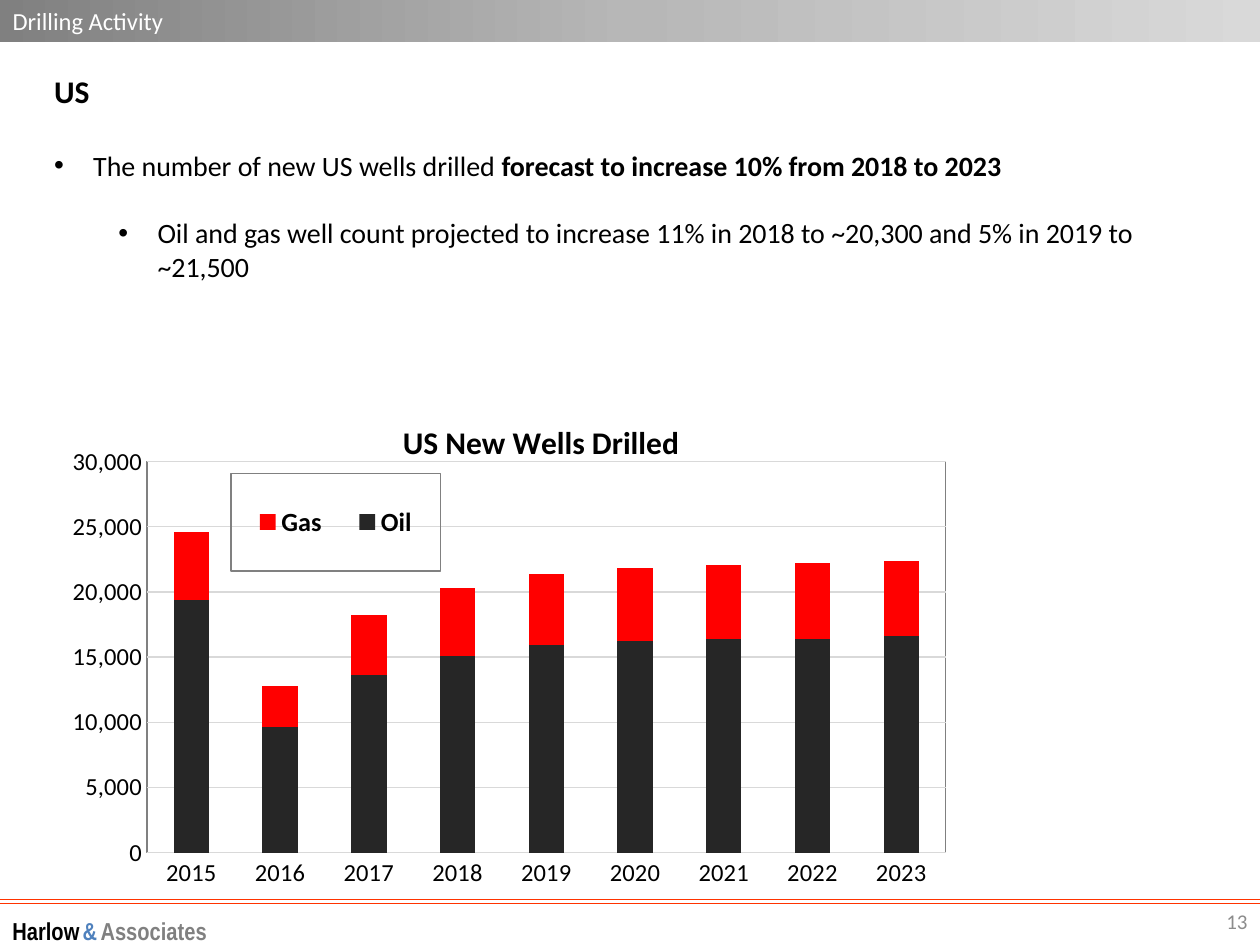
from copy import deepcopy

from lxml import etree
from pptx import Presentation
from pptx.chart.data import CategoryChartData
from pptx.dml.color import RGBColor
from pptx.enum.chart import XL_CHART_TYPE, XL_LEGEND_POSITION, XL_TICK_MARK
from pptx.enum.shapes import MSO_CONNECTOR
from pptx.enum.text import MSO_ANCHOR, MSO_AUTO_SIZE, PP_ALIGN
from pptx.oxml.ns import qn
from pptx.util import Inches, Pt

STACKED = XL_CHART_TYPE.COLUMN_STACKED
LEGEND_RIGHT = XL_LEGEND_POSITION.RIGHT
NO_TICK = XL_TICK_MARK.NONE
STRAIGHT = MSO_CONNECTOR.STRAIGHT
TOP, MIDDLE = MSO_ANCHOR.TOP, MSO_ANCHOR.MIDDLE
NO_AUTOFIT = MSO_AUTO_SIZE.NONE
LEFT, RIGHT = PP_ALIGN.LEFT, PP_ALIGN.RIGHT

THEME = {
    "font": "Calibri", "footer_font": "Arial Narrow",
    "black": "000000", "white": "FFFFFF", "gray": "808080",
    "number": "8C8C8C", "grid": "D9D9D9", "rule": "FF3300", "accent": "4F81BD",
    "bar": [(0, "808080"), (0.5, "B7B7B7"), (1, "D9D9D9")],
    "heading": 18, "body": 16, "header": 14, "axis": 14, "legend": 15,
    "footer": 14, "footer_gap": 8, "page": 12,
}

# Content: each body line is (runs as (text, bold), size, space before, indent)
HEADER = "Drilling Activity"
BODY = [
    ([("US", True)], THEME["heading"], 0, None),
    ([("The number of new US wells drilled ", False),
      ("forecast to increase 10% from 2018 to 2023", True)], THEME["body"], 22, 0.31),
    ([("Oil and gas well count projected to increase 11% in 2018 to ~20,300 "
       "and 5% in 2019 to ~21,500", False)], THEME["body"], 19.5, 0.82),
]
HANGING = 0.31
CHART_TITLE = "US New Wells Drilled"
YEARS = [str(year) for year in range(2015, 2024)]
WELLS = [
    ("Oil", "262626", [19400, 9600, 13600, 15100, 15900, 16200, 16400, 16400, 16600]),
    ("Gas", "FF0000", [5200, 3200, 4600, 5200, 5500, 5600, 5700, 5800, 5800]),
]
FOOTER = [("Harlow", "black"), ("&", "accent"), ("Associates", "gray")]
PAGE = "13"
RULES = [7.14, 7.17]


def rgb(value):
    return RGBColor.from_string(value)


def style(font, size, color=THEME["black"], bold=False, name=THEME["font"]):
    font.size, font.bold, font.name = Pt(size), bold, name
    font.color.rgb = rgb(color)


def add_run(p, text, **fmt):
    r = p.add_run()
    r.text = text
    style(r.font, **fmt)


def place(sp, left, top, width, height, anchor=MIDDLE):
    sp.left, sp.top = Inches(left), Inches(top)
    sp.width, sp.height = Inches(width), Inches(height)
    tf = sp.text_frame
    tf.word_wrap, tf.auto_size, tf.vertical_anchor = True, NO_AUTOFIT, anchor
    return tf


def set_bullet(p, indent):
    pPr = p._p.get_or_add_pPr()
    hanging = 0 if indent is None else HANGING
    pPr.set("marL", str(Inches(indent or 0)))
    pPr.set("indent", str(-Inches(hanging)))
    if indent is None:
        etree.SubElement(pPr, qn("a:buNone"))
    else:
        etree.SubElement(pPr, qn("a:buFont"), typeface="Arial")
        etree.SubElement(pPr, qn("a:buChar"), char="•")


def set_layout(parent, index, inner=False, **box):
    """Place a chart part by fractions of the chart area."""
    for old in parent.findall(qn("c:layout")):
        parent.remove(old)
    layout = etree.Element(qn("c:layout"))
    parent.insert(index, layout)
    manual = etree.SubElement(layout, qn("c:manualLayout"))
    values = [("layoutTarget", "inner")] if inner else []
    values += [("xMode", "edge"), ("yMode", "edge")]
    values += [(key, str(value)) for key, value in box.items()]
    for key, value in values:
        etree.SubElement(manual, qn(f"c:{key}"), val=value)


def outline(color, width=0.75):
    spPr = etree.Element(qn("c:spPr"))
    etree.SubElement(spPr, qn("a:noFill"))
    ln = etree.SubElement(spPr, qn("a:ln"), w=str(Pt(width)))
    fill = etree.SubElement(ln, qn("a:solidFill"))
    etree.SubElement(fill, qn("a:srgbClr"), val=color)
    return spPr


def add_header(sp):
    tf = place(sp, 0, 0, 10, 0.33)
    sp.fill.gradient()
    sp.fill.gradient_angle = 0
    stops = sp._element.spPr.find(".//" + qn("a:gsLst"))
    stops.insert(1, deepcopy(stops[0]))
    for stop, (position, color) in zip(sp.fill.gradient_stops, THEME["bar"]):
        stop.position, stop.color.rgb = position, rgb(color)
    p = tf.paragraphs[0]
    p.alignment = LEFT
    add_run(p, HEADER, size=THEME["header"], color=THEME["white"])


def add_body(sp):
    tf = place(sp, 0.33, 0.52, 8.95, 1.78, TOP)
    for i, (runs, size, before, indent) in enumerate(BODY):
        p = tf.add_paragraph() if i else tf.paragraphs[0]
        p.space_before = Pt(before)
        set_bullet(p, indent)
        for text, bold in runs:
            add_run(p, text, size=size, bold=bold)


def add_wells_chart(s):
    data = CategoryChartData(number_format="#,##0")
    data.categories = YEARS
    for name, _, values in WELLS:
        data.add_series(name, values)
    chart = s.shapes.add_chart(STACKED, Inches(0.5), Inches(3.17),
                               Inches(7.17), Inches(3.98), data).chart
    style(chart.font, 10, bold=True)

    # Title
    tf = chart.chart_title.text_frame
    add_run(tf.paragraphs[0], CHART_TITLE, size=THEME["heading"], bold=True)
    set_layout(chart.chart_title._element, 1, x=0.37, y=0.03)

    # Columns
    plot = chart.plots[0]
    plot.gap_width, plot.overlap, plot.vary_by_categories = 151, 100, False
    for series, (_, color, _) in zip(plot.series, WELLS):
        series.format.fill.solid()
        series.format.fill.fore_color.rgb = rgb(color)

    # Axes
    cat, val = chart.category_axis, chart.value_axis
    for axis in (cat, val):
        axis.major_tick_mark = axis.minor_tick_mark = NO_TICK
        style(axis.tick_labels.font, THEME["axis"])
    val.minimum_scale, val.maximum_scale, val.major_unit = 0, 30000, 5000
    val.tick_labels.number_format = "#,##0"
    val.tick_labels.number_format_is_linked = False
    val.format.line.fill.background()
    for line in (cat.format.line, val.major_gridlines.format.line):
        line.color.rgb, line.width = rgb(THEME["grid"]), Pt(0.75)

    # Plot frame
    area = chart._chartSpace.find(".//" + qn("c:plotArea"))
    set_layout(area, 0, inner=True, x=0.093, y=0.124, w=0.884, h=0.78)
    area.append(outline(THEME["gray"]))

    # Legend
    chart.has_legend = True
    legend = chart.legend
    legend.position, legend.include_in_layout = LEGEND_RIGHT, True
    style(legend.font, THEME["legend"], bold=True)
    set_layout(legend._element, 1, x=0.186, y=0.147, w=0.232, h=0.195)
    legend._element.find(qn("c:txPr")).addprevious(outline(THEME["gray"]))


def add_footer(s):
    for y in RULES:
        rule = s.shapes.add_connector(STRAIGHT, 0, Inches(y), Inches(10), Inches(y))
        rule.line.color.rgb, rule.line.width = rgb(THEME["rule"]), Pt(0.75)
        etree.SubElement(rule._element.spPr, qn("a:effectLst"))

    p = place(s.shapes.add_textbox(0, 0, 0, 0), 7.67, 7.11, 2.33, 0.4).paragraphs[0]
    p.alignment = RIGHT
    add_run(p, PAGE, size=THEME["page"], color=THEME["number"])

    p = place(s.shapes.add_textbox(0, 0, 0, 0), 0, 7.25, 4.33, 0.27).paragraphs[0]
    name = THEME["footer_font"]
    for i, (word, color) in enumerate(FOOTER):
        if i:
            add_run(p, " ", size=THEME["footer_gap"], name=name)
        add_run(p, word, size=THEME["footer"], color=THEME[color], bold=True, name=name)


def main():
    prs = Presentation()
    prs.slide_width, prs.slide_height = Inches(10), Inches(7.5)
    s = prs.slides.add_slide(prs.slide_layouts[1])
    add_header(s.shapes.title)
    add_body(s.placeholders[1])
    add_wells_chart(s)
    add_footer(s)
    prs.save("out.pptx")


if __name__ == "__main__":
    main()
